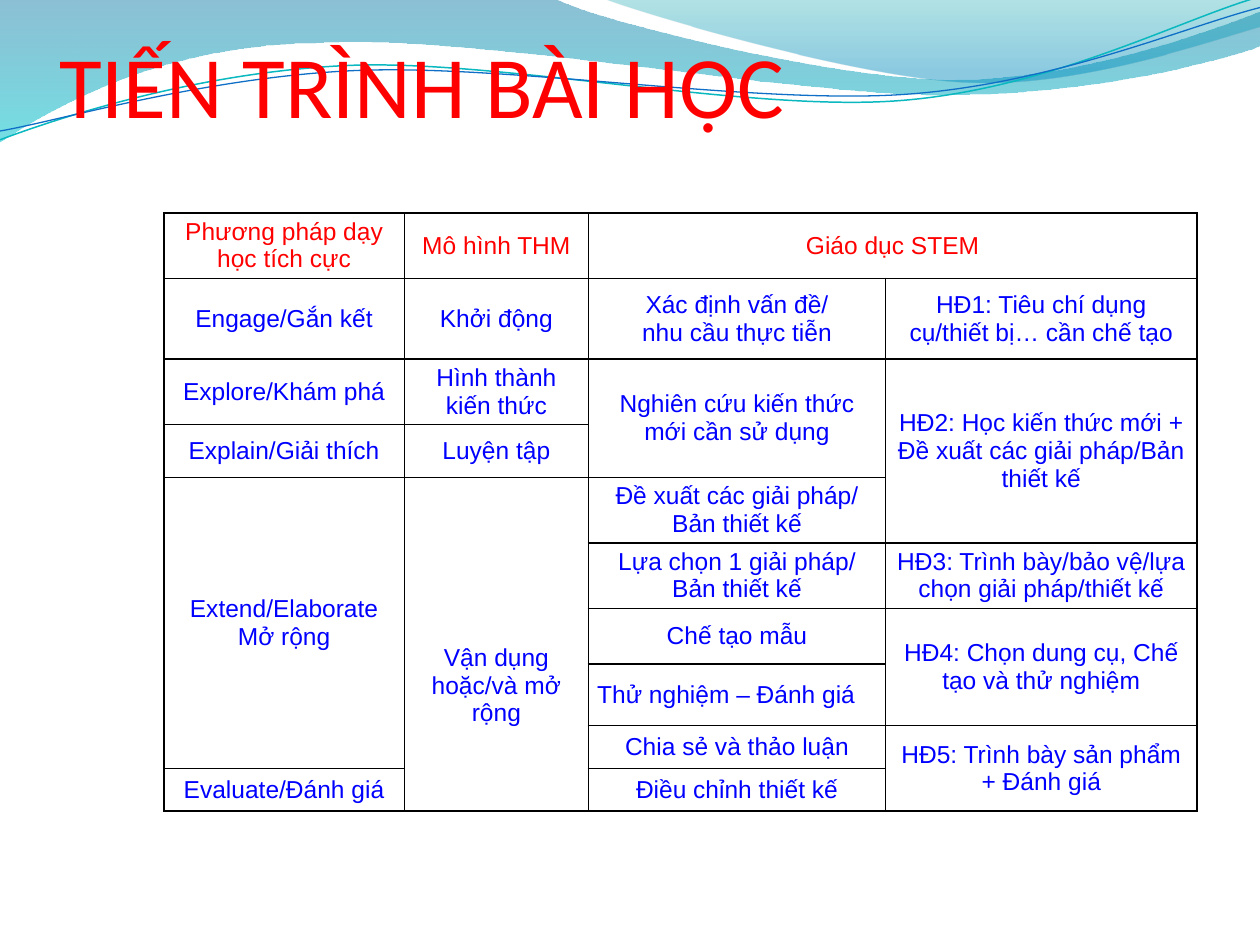
from lxml import etree
from pptx import Presentation
from pptx.dml.color import RGBColor
from pptx.enum.text import MSO_ANCHOR, PP_ALIGN
from pptx.oxml.ns import qn
from pptx.util import Inches, Pt

LEFT, CENTER = PP_ALIGN.LEFT, PP_ALIGN.CENTER
MIDDLE, BOTTOM = MSO_ANCHOR.MIDDLE, MSO_ANCHOR.BOTTOM

RED = RGBColor(0xFF, 0x00, 0x00)
BLUE = RGBColor(0x00, 0x00, 0xFF)
DEEP_BLUE = RGBColor(0x00, 0x74, 0xA1)
AQUA = RGBColor(0x00, 0xC6, 0xCF)
TEAL = RGBColor(0x00, 0xA1, 0xA9)
SKY = RGBColor(0x00, 0x8B, 0xBF)
LINE_TEAL = RGBColor(0x0A, 0xB8, 0xBF)
LINE_BLUE = RGBColor(0x0F, 0x6F, 0xC6)

# Outlines: a start point, then straight steps (2 numbers) or Bezier steps (6)
WIDE_WAVE = [
    (0, -0.01), (4.4, -0.01), (4.76, 0.17, 6.64, 0.63, 7.58, 0.63),
    (8.53, 0.63, 9.58, 0.26, 10, 0.09), (10.01, 0.36),
    (9.83, 0.44, 8.7, 0.76, 7.46, 0.75), (6.22, 0.75, 3.82, 0.28, 2.57, 0.34),
    (1.29, 0.35, 0.46, 0.83, -0.01, 1.13), (0, -0.01)]
RIGHT_WAVE = [
    (4.79, -0.01), (5.09, 0.11, 6.82, 0.62, 7.69, 0.65),
    (8.56, 0.69, 9.61, 0.32, 10, 0.21), (10, 0), (4.79, -0.01)]
TEAL_CURVE = [
    (0, 1.11), (0.48, 0.93, 1.58, 0.57, 2.77, 0.52),
    (3.95, 0.47, 5.93, 0.89, 7.13, 0.8), (8.33, 0.71, 9.38, 0.15, 9.98, -0.02)]
BLUE_CURVE = [
    (0, 1.04), (0.47, 0.96, 1.64, 0.61, 2.83, 0.56),
    (4.03, 0.51, 5.97, 0.83, 7.17, 0.75), (8.36, 0.67, 9.41, 0.21, 10, 0.06)]

COLS = [1.91, 1.46, 2.36, 2.47]
ROWS = [0.52, 0.64, 0.52, 0.42, 0.52, 0.52, 0.44, 0.49, 0.34, 0.34]

# Row, column, rows spanned, columns spanned, text
CELLS = [
    (0, 0, 1, 1, "Phương pháp dạy học tích cực"),
    (0, 1, 1, 1, "Mô hình THM"),
    (0, 2, 1, 2, "Giáo dục STEM"),
    (1, 0, 1, 1, "Engage/Gắn kết"),
    (1, 1, 1, 1, "Khởi động"),
    (1, 2, 1, 1, "Xác định vấn đề/\nnhu cầu thực tiễn"),
    (1, 3, 1, 1, "HĐ1: Tiêu chí dụng cụ/thiết bị… cần chế tạo"),
    (2, 0, 1, 1, "Explore/Khám phá"),
    (2, 1, 1, 1, "Hình thành kiến thức"),
    (2, 2, 2, 1, "Nghiên cứu kiến thức mới cần sử dụng"),
    (2, 3, 3, 1, "HĐ2: Học kiến thức mới + Đề xuất các giải pháp/Bản thiết kế"),
    (3, 0, 1, 1, "Explain/Giải thích"),
    (3, 1, 1, 1, "Luyện tập"),
    (4, 0, 5, 1, "Extend/Elaborate\nMở rộng"),
    (4, 1, 6, 1, "Vận dụng hoặc/và mở rộng"),
    (4, 2, 1, 1, "Đề xuất các giải pháp/\nBản thiết kế"),
    (5, 2, 1, 1, "Lựa chọn 1 giải pháp/\nBản thiết kế"),
    (5, 3, 1, 1, "HĐ3: Trình bày/bảo vệ/lựa chọn giải pháp/thiết kế"),
    (6, 2, 1, 1, "Chế tạo mẫu"),
    (6, 3, 2, 1, "HĐ4: Chọn dung cụ, Chế tạo và thử nghiệm"),
    (7, 2, 1, 1, "Thử nghiệm – Đánh giá"),
    (8, 2, 1, 1, "Chia sẻ và thảo luận"),
    (8, 3, 2, 1, "HĐ5: Trình bày sản phẩm + Đánh giá"),
    (9, 0, 1, 1, "Evaluate/Đánh giá"),
    (9, 2, 1, 1, "Điều chỉnh thiết kế"),
]
LOWERED_CELL = (4, 1)
LEFT_CELL = (7, 2)


def add_outline(s, outline, close):
    """Build a freeform, then join each Bezier step's three points in a curve."""
    points = [(Inches(step[i]), Inches(step[i + 1]))
              for step in outline for i in range(0, len(step), 2)]
    builder = s.shapes.build_freeform(*points[0])
    builder.add_line_segments(points[1:], close=close)
    sp = builder.convert_to_shape()
    sp.shadow.inherit = False
    lines = iter(list(sp._element.spPr.iter(qn("a:lnTo"))))
    for step in outline[1:]:
        line = next(lines)
        if len(step) == 6:
            line.tag = qn("a:cubicBezTo")
            for _ in range(2):
                extra = next(lines)
                line.append(extra[0])
                extra.getparent().remove(extra)
    return sp


def add_wave(s, outline, stops):
    """Stops are (position, colour, opacity in percent), top to bottom."""
    sp = add_outline(s, outline, True)
    sp.line.fill.background()
    sp.fill.gradient()
    sp.fill.gradient_angle = 270
    for stop, (position, color, _) in zip(sp.fill.gradient_stops, stops):
        stop.position = position
        stop.color.rgb = color
    colors = sp._element.spPr.iter(qn("a:srgbClr"))
    for clr, (_, _, opacity) in zip(colors, stops):
        etree.SubElement(clr, qn("a:alpha")).set("val", str(opacity * 1000))


def add_curve(s, outline, color, width):
    sp = add_outline(s, outline, False)
    sp.fill.background()
    sp.line.color.rgb = color
    sp.line.width = Pt(width)


def set_title(s, text):
    sp = s.shapes.title
    s.shapes._spTree.append(sp._element)  # in front of the waves
    sp.left, sp.top, sp.width, sp.height = map(Inches, (0.47, 0.08, 9, 1))
    tf = sp.text_frame
    tf.text = text
    tf.vertical_anchor = BOTTOM
    tf.margin_left = tf.margin_right = tf.margin_bottom = 0
    tf.margin_top = Inches(0.05)
    p = tf.paragraphs[0]
    p.alignment = LEFT
    p.font.name, p.font.size = "Calibri", Pt(50)
    p.font.color.rgb = RED


def style_cell(cell):
    """Black borders, no fill, tight margins."""
    tcPr = cell._tc.get_or_add_tcPr()
    for side in ("a:lnL", "a:lnR", "a:lnT", "a:lnB"):
        ln = etree.SubElement(tcPr, qn(side), w=str(Pt(1)))
        fill = etree.SubElement(ln, qn("a:solidFill"))
        etree.SubElement(fill, qn("a:srgbClr"), val="000000")
    cell.fill.background()
    cell.vertical_anchor = MIDDLE
    cell.margin_left = cell.margin_right = Inches(0.07)
    cell.margin_top = cell.margin_bottom = Inches(0.04)


def add_lesson_table(s):
    table = s.shapes.add_table(len(ROWS), len(COLS), Inches(1.3), Inches(1.69),
                               Inches(sum(COLS)), Inches(sum(ROWS))).table
    table.first_row = table.horz_banding = False
    for column, width in zip(table.columns, COLS):
        column.width = Inches(width)
    for row, height in zip(table.rows, ROWS):
        row.height = Inches(height)
    for cell in table.iter_cells():
        style_cell(cell)
    for r, c, down, across, text in CELLS:
        cell = table.cell(r, c)
        if down * across > 1:
            cell.merge(table.cell(r + down - 1, c + across - 1))
        cell.text = text
        for p in cell.text_frame.paragraphs:
            p.alignment = LEFT if (r, c) == LEFT_CELL else CENTER
            p.font.name, p.font.size = "Arial", Pt(14)
            p.font.color.rgb = RED if r == 0 else BLUE
    table.cell(*LOWERED_CELL).margin_top = Inches(0.7)


def main():
    prs = Presentation()
    prs.slide_width, prs.slide_height = Inches(10), Inches(7.5)
    s = prs.slides.add_slide(prs.slide_layouts[5])
    # Waves along the top
    add_wave(s, WIDE_WAVE, [(0, DEEP_BLUE, 45), (1, AQUA, 55)])
    add_wave(s, RIGHT_WAVE, [(0, TEAL, 30), (0.8, SKY, 45)])
    add_curve(s, TEAL_CURVE, LINE_TEAL, 0.85)
    add_curve(s, BLUE_CURVE, LINE_BLUE, 0.75)
    # Content
    set_title(s, "TIẾN TRÌNH BÀI HỌC")
    add_lesson_table(s)
    prs.save("out.pptx")


if __name__ == "__main__":
    main()
